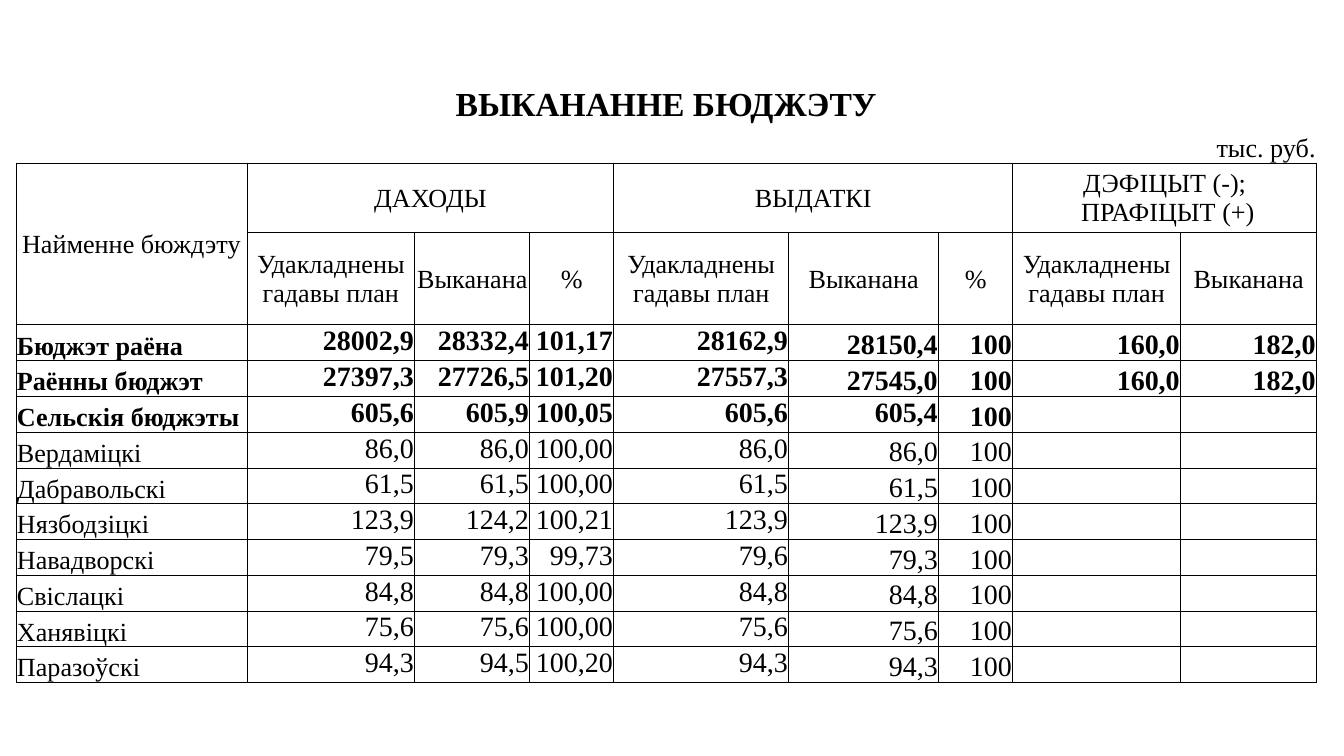
"""Budget execution slide: one table of revenue, spending and balance by budget."""
from dataclasses import dataclass

from lxml import etree
from pptx import Presentation
from pptx.dml.color import RGBColor
from pptx.enum.text import MSO_ANCHOR, PP_ALIGN
from pptx.oxml.ns import qn
from pptx.table import Table, _Cell
from pptx.util import Emu, Pt

TOP, MIDDLE, BOTTOM = MSO_ANCHOR.TOP, MSO_ANCHOR.MIDDLE, MSO_ANCHOR.BOTTOM
LEFT, CENTER, RIGHT = PP_ALIGN.LEFT, PP_ALIGN.CENTER, PP_ALIGN.RIGHT


@dataclass(frozen=True)
class Theme:
    """Font, colours and type sizes."""
    font: str = "Times New Roman"
    ink: str = "000000"
    paper: str = "FFFFFF"
    title: int = 18
    label: int = 14
    number: int = 15
    rule: float = 0.5


@dataclass(frozen=True)
class Header:
    """A heading cell with its place and span."""
    text: str
    row: int
    col: int
    rows: int = 1
    cols: int = 1
    size: int = 14
    bold: bool = False
    align: PP_ALIGN = CENTER
    anchor: MSO_ANCHOR = MIDDLE


@dataclass(frozen=True)
class Budget:
    """One budget with its figures in column order."""
    name: str
    figures: str
    bold: bool = False
    spent_anchor: MSO_ANCHOR = BOTTOM


THEME = Theme()
SLIDE = (1344, 756)
ORIGIN = (16, 82)
COLS = (231, 134, 34, 87, 28, 84, 175, 120, 30, 74, 168, 16, 120)
HEAD_ROWS = (45, 36, 70, 92)
BODY_HEIGHT = 358
RULED_FROM = 2
FIGURE_COLS = ((1, 2), (3, 2), (5, 1), (6, 1), (7, 2), (9, 1), (10, 1), (11, 2))
SPENT = 4
PLAN, DONE, SHARE = "Удакладнены гадавы план", "Выканана", "%"

HEADERS = [
    Header("ВЫКАНАННЕ БЮДЖЭТУ", 0, 0, cols=13, size=THEME.title, bold=True),
    Header("тыс. руб.", 1, 12, align=RIGHT, anchor=BOTTOM),
    Header("Найменне бюждэту", 2, 0, rows=2),
    Header("ДАХОДЫ", 2, 1, cols=5),
    Header("ВЫДАТКІ", 2, 6, cols=4),
    Header("ДЭФІЦЫТ (-);\n ПРАФІЦЫТ (+)", 2, 10, cols=3),
] + [
    Header(text, 3, col, cols=span)
    for text, (col, span) in zip((PLAN, DONE, SHARE) * 2 + (PLAN, DONE), FIGURE_COLS)
]

BUDGETS = [
    Budget("Бюджэт раёна", "28002,9 28332,4 101,17 28162,9 28150,4 100 160,0 182,0", True),
    Budget("Раённы бюджэт", "27397,3 27726,5 101,20 27557,3 27545,0 100 160,0 182,0", True),
    Budget("Сельскія бюджэты", "605,6 605,9 100,05 605,6 605,4 100", True, TOP),
    Budget("Вердаміцкі", "86,0 86,0 100,00 86,0 86,0 100"),
    Budget("Дабравольскі", "61,5 61,5 100,00 61,5 61,5 100"),
    Budget("Нязбодзіцкі", "123,9 124,2 100,21 123,9 123,9 100"),
    Budget("Навадворскі", "79,5 79,3 99,73 79,6 79,3 100"),
    Budget("Свіслацкі", "84,8 84,8 100,00 84,8 84,8 100"),
    Budget("Ханявіцкі", "75,6 75,6 100,00 75,6 75,6 100"),
    Budget("Паразоўскі", "94,3 94,5 100,20 94,3 94,3 100"),
]


def px(n: int) -> Emu:
    """Turn slide pixels into EMU."""
    return Emu(round(n * 914400 / 134.4))


def rule_cell(cell: _Cell, sides: str) -> None:
    """Draw the named sides of a cell and blank the others."""
    tc_pr = cell._tc.get_or_add_tcPr()
    for side in "LRTB":
        ln = etree.SubElement(tc_pr, qn(f"a:ln{side}"), w=str(Pt(THEME.rule)))
        if side in sides:
            fill = etree.SubElement(ln, qn("a:solidFill"))
            etree.SubElement(fill, qn("a:srgbClr"), val=THEME.ink)
        else:
            etree.SubElement(ln, qn("a:noFill"))


def prepare_cell(cell: _Cell, sides: str) -> None:
    """Give a cell its rules, fill, tight margins and empty-line size."""
    rule_cell(cell, sides)
    cell.fill.solid()
    cell.fill.fore_color.rgb = RGBColor.from_string(THEME.paper)
    cell.margin_left = cell.margin_right = cell.margin_top = px(1)
    cell.margin_bottom = 0
    p = cell.text_frame.paragraphs[0]
    etree.SubElement(p._p, qn("a:endParaRPr"), sz=str(THEME.label * 100))


def write_cell(cell: _Cell, text: str, size: int, bold: bool,
               align: PP_ALIGN, anchor: MSO_ANCHOR) -> None:
    """Write one paragraph per line into a cell."""
    cell.vertical_anchor = anchor
    tf = cell.text_frame
    for i, line in enumerate(text.split("\n")):
        p = tf.add_paragraph() if i else tf.paragraphs[0]
        p.alignment = align
        r = p.add_run()
        r.text = line
        r.font.name = THEME.font
        r.font.size = Pt(size)
        r.font.bold = bold
        r.font.color.rgb = RGBColor.from_string(THEME.ink)


def merge(table: Table, row: int, col: int, rows: int, cols: int) -> _Cell:
    """Merge a block when it spans several cells and return its first cell."""
    cell = table.cell(row, col)
    if rows * cols > 1:
        cell.merge(table.cell(row + rows - 1, col + cols - 1))
    return cell


def write_header(table: Table, h: Header) -> None:
    """Place one heading."""
    cell = merge(table, h.row, h.col, h.rows, h.cols)
    write_cell(cell, h.text, h.size, h.bold, h.align, h.anchor)


def write_budget(table: Table, row: int, b: Budget) -> None:
    """Place one budget's name and figures."""
    write_cell(table.cell(row, 0), b.name, THEME.label, b.bold, LEFT, BOTTOM)
    figures = b.figures.split()
    for i, (col, span) in enumerate(FIGURE_COLS):
        cell = merge(table, row, col, 1, span)
        if i < len(figures):
            anchor = TOP if i < SPENT else b.spent_anchor if i == SPENT else BOTTOM
            write_cell(cell, figures[i], THEME.number, b.bold, RIGHT, anchor)


def add_budget_table(s) -> None:
    """Add the whole table to the slide."""
    heights = [px(h) for h in HEAD_ROWS]
    heights += [Emu(px(BODY_HEIGHT) // len(BUDGETS))] * len(BUDGETS)
    table = s.shapes.add_table(len(heights), len(COLS), *map(px, ORIGIN),
                               px(sum(COLS)), Emu(sum(heights))).table
    table.first_row = table.horz_banding = False
    for column, width in zip(table.columns, COLS):
        column.width = px(width)
    for i, (row, height) in enumerate(zip(table.rows, heights)):
        row.height = height
        sides = "LRTB" if i >= RULED_FROM else "B" if i == RULED_FROM - 1 else ""
        for cell in row.cells:
            prepare_cell(cell, sides)
    for h in HEADERS:
        write_header(table, h)
    for row, b in enumerate(BUDGETS, len(HEAD_ROWS)):
        write_budget(table, row, b)


def main() -> None:
    """Build and save the slide."""
    prs = Presentation()
    prs.slide_width, prs.slide_height = map(px, SLIDE)
    s = prs.slides.add_slide(prs.slide_layouts[6])
    add_budget_table(s)
    prs.save("out.pptx")


if __name__ == "__main__":
    main()
